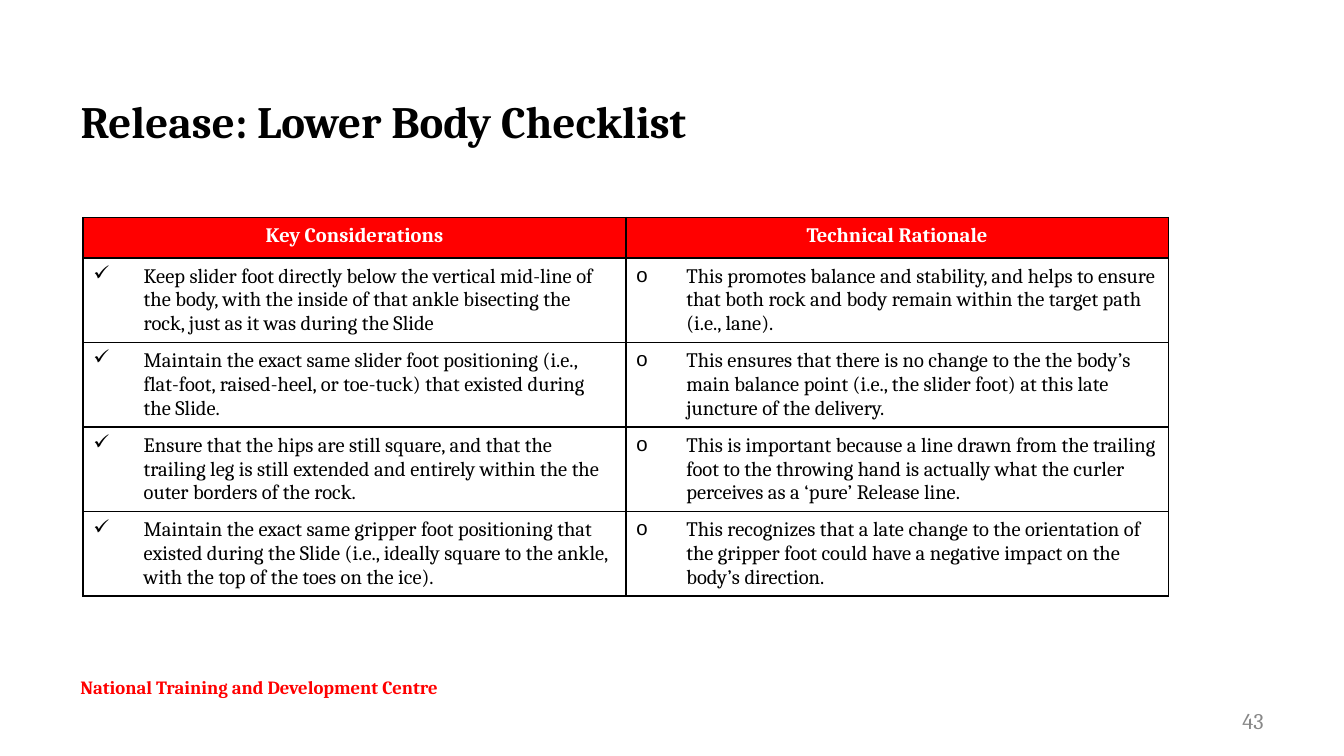
from lxml.etree import SubElement
from pptx import Presentation
from pptx.dml.color import RGBColor
from pptx.enum.text import MSO_ANCHOR, MSO_AUTO_SIZE, PP_ALIGN
from pptx.oxml.ns import qn
from pptx.util import Pt

TITLE = "Release: Lower Body Checklist"
FOOTER = "National Training and Development Centre"
NUMBER = "43"
HEADS = ("Key Considerations", "Technical Rationale")
MARKS = (("✓", None), ("o", "Courier New"))
CHECKS = [
    ("Keep slider foot directly below the vertical mid-line of the body, with the inside of that "
     "ankle bisecting the rock, just as it was during the Slide",
     "This promotes balance and stability, and helps to ensure that both rock and body remain "
     "within the target path (i.e., lane)."),
    ("Maintain the exact same slider foot positioning (i.e., flat-foot, raised-heel, or toe-tuck) "
     "that existed during the Slide.",
     "This ensures that there is no change to the the body’s main balance point (i.e., the slider "
     "foot) at this late juncture of the delivery."),
    ("Ensure that the hips are still square, and that the trailing leg is still extended and "
     "entirely within the the outer borders of the rock.",
     "This is important because a line drawn from the trailing foot to the throwing hand is "
     "actually what the curler perceives as a ‘pure’ Release line."),
    ("Maintain the exact same gripper foot positioning that existed during the Slide (i.e., "
     "ideally square to the ankle, with the top of the toes on the ice).",
     "This recognizes that a late change to the orientation of the gripper foot could have a "
     "negative impact on the body’s direction."),
]

THEME = {
    "font": "Cambria",
    "black": "000000", "white": "FFFFFF", "red": "FF0000", "grey": "888888",
    "title": 24, "number": 12, "body": 11, "footer": 10,
}
LEFT, TOP, WIDTH = 44.6, 116.6, 581.4
HEAD_H, ROW_H = 21.6, 45.3
INDENT = 27


def write(frame, text, size, color, bold=False, align=PP_ALIGN.LEFT):
    para = frame.paragraphs[0]
    para.alignment = align
    run = para.add_run()
    run.text = text
    font = run.font
    font.name, font.size, font.bold = THEME["font"], Pt(THEME[size]), bold
    font.color.rgb = RGBColor.from_string(THEME[color])
    return para


def add_box(slide, left, top, width, height, anchor=MSO_ANCHOR.TOP):
    frame = slide.shapes.add_textbox(Pt(left), Pt(top), Pt(width), Pt(height)).text_frame
    frame.word_wrap = True
    frame.vertical_anchor = anchor
    return frame


def add_mark(para, char, face):
    """Give the paragraph a hanging bullet."""
    props = para._p.get_or_add_pPr()
    props.set("marL", str(Pt(INDENT)))
    props.set("indent", str(Pt(-INDENT)))
    if face:
        SubElement(props, qn("a:buFont"), typeface=face)
    SubElement(props, qn("a:buChar"), char=char)


def style(cell, fill):
    """Draw the four borders, then the fill."""
    props = cell._tc.get_or_add_tcPr()
    for side in ("lnL", "lnR", "lnT", "lnB"):
        line = SubElement(props, qn(f"a:{side}"), w=str(Pt(1)))
        SubElement(SubElement(line, qn("a:solidFill")), qn("a:srgbClr"), val=THEME["black"])
    cell.fill.solid()
    cell.fill.fore_color.rgb = RGBColor.from_string(THEME[fill])


def add_checks(slide):
    count = len(CHECKS) + 1
    height = HEAD_H + ROW_H * len(CHECKS)
    table = slide.shapes.add_table(
        count, len(HEADS), Pt(LEFT), Pt(TOP), Pt(WIDTH), Pt(height)).table
    for col in table.columns:
        col.width = Pt(WIDTH / len(HEADS))
    for i, row in enumerate(table.rows):
        row.height = Pt(ROW_H if i else HEAD_H)

    for cell, head in zip(table.rows[0].cells, HEADS):
        style(cell, "red")
        write(cell.text_frame, head, "body", "white", True, PP_ALIGN.CENTER)
    for i, texts in enumerate(CHECKS, 1):
        for cell, text, mark in zip(table.rows[i].cells, texts, MARKS):
            style(cell, "white")
            cell.vertical_anchor = MSO_ANCHOR.MIDDLE
            cell.margin_left = cell.margin_right = Pt(5.4)
            cell.margin_top = cell.margin_bottom = Pt(2.7)
            add_mark(write(cell.text_frame, text, "body", "black"), *mark)


def main():
    deck = Presentation()
    deck.slide_width, deck.slide_height = Pt(720), Pt(405)
    slide = deck.slides.add_slide(deck.slide_layouts[5])

    title = slide.shapes.title
    title.left, title.top, title.width, title.height = Pt(36), Pt(31), Pt(585.4), Pt(67.7)
    frame = title.text_frame
    frame.auto_size = MSO_AUTO_SIZE.NONE
    frame.vertical_anchor = MSO_ANCHOR.MIDDLE
    frame.margin_left = frame.margin_right = frame.margin_top = frame.margin_bottom = Pt(7.2)
    write(frame, TITLE, "title", "black", True)

    add_checks(slide)
    write(add_box(slide, 36, 358.6, 272.9, 31.7), FOOTER, "footer", "red", True)
    write(add_box(slide, 516, 375.4, 168, 21.6, MSO_ANCHOR.MIDDLE),
          NUMBER, "number", "grey", align=PP_ALIGN.RIGHT)
    deck.save("out.pptx")


if __name__ == "__main__":
    main()
